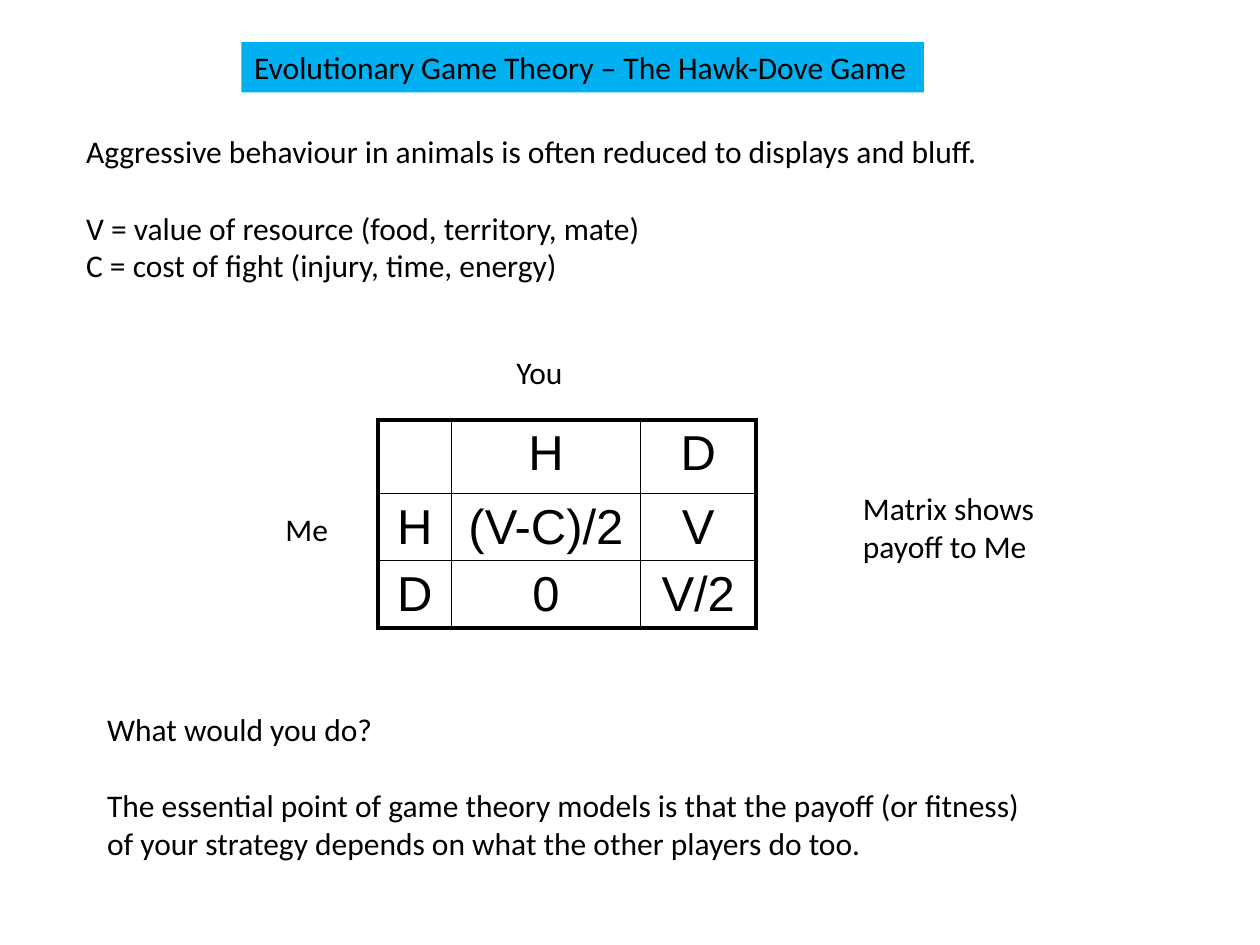
from dataclasses import dataclass

from lxml.etree import SubElement
from pptx import Presentation
from pptx.dml.color import RGBColor
from pptx.enum.text import MSO_ANCHOR, MSO_AUTO_SIZE, PP_ALIGN
from pptx.oxml.ns import qn
from pptx.util import Emu, Inches, Pt


@dataclass(frozen=True)
class Theme:
    ink: str = "000000"
    band: str = "00B0F0"
    text_font: str = "Calibri"
    cell_font: str = "Arial"
    text_size: int = 18
    cell_size: int = 28
    gap: int = 22
    thin: float = 1
    thick: float = 2.25


@dataclass(frozen=True)
class Area:
    col: float
    row: float
    wide: float
    high: float


@dataclass(frozen=True)
class Line:
    text: str
    gap: int = 0


@dataclass(frozen=True)
class Label:
    area: Area
    text: str


THEME = Theme()
WIDTH, HEIGHT = Inches(10), Inches(7.5)
COLS, ROWS = 120, 90

TITLE = Label(Area(23, 4, 65, 4.8), "Evolutionary Game Theory – The Hawk-Dove Game")
BODIES = [
    (Area(7, 12, 104, 15.7), [
        Line("Aggressive behaviour in animals is often reduced to displays and bluff."),
        Line("V = value of resource (food, territory, mate)", THEME.gap),
        Line("C = cost of fight (injury, time, energy)"),
    ]),
    (Area(9, 67, 91, 15.7), [
        Line("What would you do?"),
        Line("The essential point of game theory models is that the payoff (or fitness) "
             "of your strategy depends on what the other players do too.", THEME.gap),
    ]),
]
LABELS = [
    Label(Area(48, 33, 10, 5.2), "You"),
    Label(Area(26, 48, 8, 5.2), "Me"),
    Label(Area(81, 46, 21, 8.5), "Matrix shows payoff to Me"),
]
MATRIX = [["", "H", "D"], ["H", "(V-C)/2", "V"], ["D", "0", "V/2"]]
MATRIX_AREA = Area(36, 40, 36, 19.8)
MATRIX_COLS = [7, 18, 11]
MATRIX_ROWS = [7, 6.4, 6.4]
CELL_FOOT = 0.3


def across(cols: float) -> Emu:
    return Emu(round(WIDTH * cols / COLS))


def down(rows: float) -> Emu:
    return Emu(round(HEIGHT * rows / ROWS))


def bounds(area: Area) -> tuple:
    return across(area.col), down(area.row), across(area.wide), down(area.high)


def place(shape, area: Area) -> None:
    shape.left, shape.top, shape.width, shape.height = bounds(area)


def add_text(para, text: str, font: str, size: int) -> None:
    run = para.add_run()
    run.text = text
    run.font.name = font
    run.font.size = Pt(size)
    run.font.color.rgb = RGBColor.from_string(THEME.ink)


def fill_frame(frame, lines: list[Line]) -> None:
    frame.word_wrap = True
    frame.auto_size = MSO_AUTO_SIZE.NONE
    frame.vertical_anchor = MSO_ANCHOR.TOP
    for index, line in enumerate(lines):
        para = frame.add_paragraph() if index else frame.paragraphs[0]
        para.alignment = PP_ALIGN.LEFT
        para.space_before = Pt(line.gap)
        add_text(para, line.text, THEME.text_font, THEME.text_size)


def clear_bullets(frame) -> None:
    for para in frame.paragraphs:
        props = para._p.get_or_add_pPr()
        props.set("marL", "0")
        props.set("indent", "0")
        SubElement(props, qn("a:buNone"))


def add_border(cell, side: str, width: float) -> None:
    edge = SubElement(cell._tc.get_or_add_tcPr(), qn(f"a:ln{side}"), w=str(Pt(width)))
    fill = SubElement(edge, qn("a:solidFill"))
    SubElement(fill, qn("a:srgbClr"), val=THEME.ink)


def draw_cell(cell, text: str, outer: dict[str, bool]) -> None:
    for side, heavy in outer.items():
        add_border(cell, side, THEME.thick if heavy else THEME.thin)
    cell.fill.background()
    cell.margin_bottom = down(CELL_FOOT)
    if text:
        para = cell.text_frame.paragraphs[0]
        para.alignment = PP_ALIGN.CENTER
        add_text(para, text, THEME.cell_font, THEME.cell_size)


def draw_matrix(slide) -> None:
    count, span = len(MATRIX), len(MATRIX[0])
    table = slide.shapes.add_table(count, span, *bounds(MATRIX_AREA)).table
    table.first_row = table.horz_banding = False
    for col, wide in zip(table.columns, MATRIX_COLS):
        col.width = across(wide)
    for row, high in zip(table.rows, MATRIX_ROWS):
        row.height = down(high)
    for r, texts in enumerate(MATRIX):
        for c, text in enumerate(texts):
            outer = {"L": c == 0, "R": c == span - 1, "T": r == 0, "B": r == count - 1}
            draw_cell(table.cell(r, c), text, outer)


def draw_title(slide) -> None:
    title = slide.shapes.title
    place(title, TITLE.area)
    title.fill.solid()
    title.fill.fore_color.rgb = RGBColor.from_string(THEME.band)
    fill_frame(title.text_frame, [Line(TITLE.text)])


def draw_body(body, area: Area, lines: list[Line]) -> None:
    place(body, area)
    fill_frame(body.text_frame, lines)
    clear_bullets(body.text_frame)


def draw_label(slide, label: Label) -> None:
    box = slide.shapes.add_textbox(*bounds(label.area))
    fill_frame(box.text_frame, [Line(label.text)])


def main() -> None:
    deck = Presentation()
    deck.slide_width, deck.slide_height = WIDTH, HEIGHT
    slide = deck.slides.add_slide(deck.slide_layouts.get_by_name("Two Content"))
    draw_title(slide)
    for index, (area, lines) in enumerate(BODIES, 1):
        draw_body(slide.placeholders[index], area, lines)
    draw_matrix(slide)
    for label in LABELS:
        draw_label(slide, label)
    deck.save("out.pptx")


if __name__ == "__main__":
    main()
